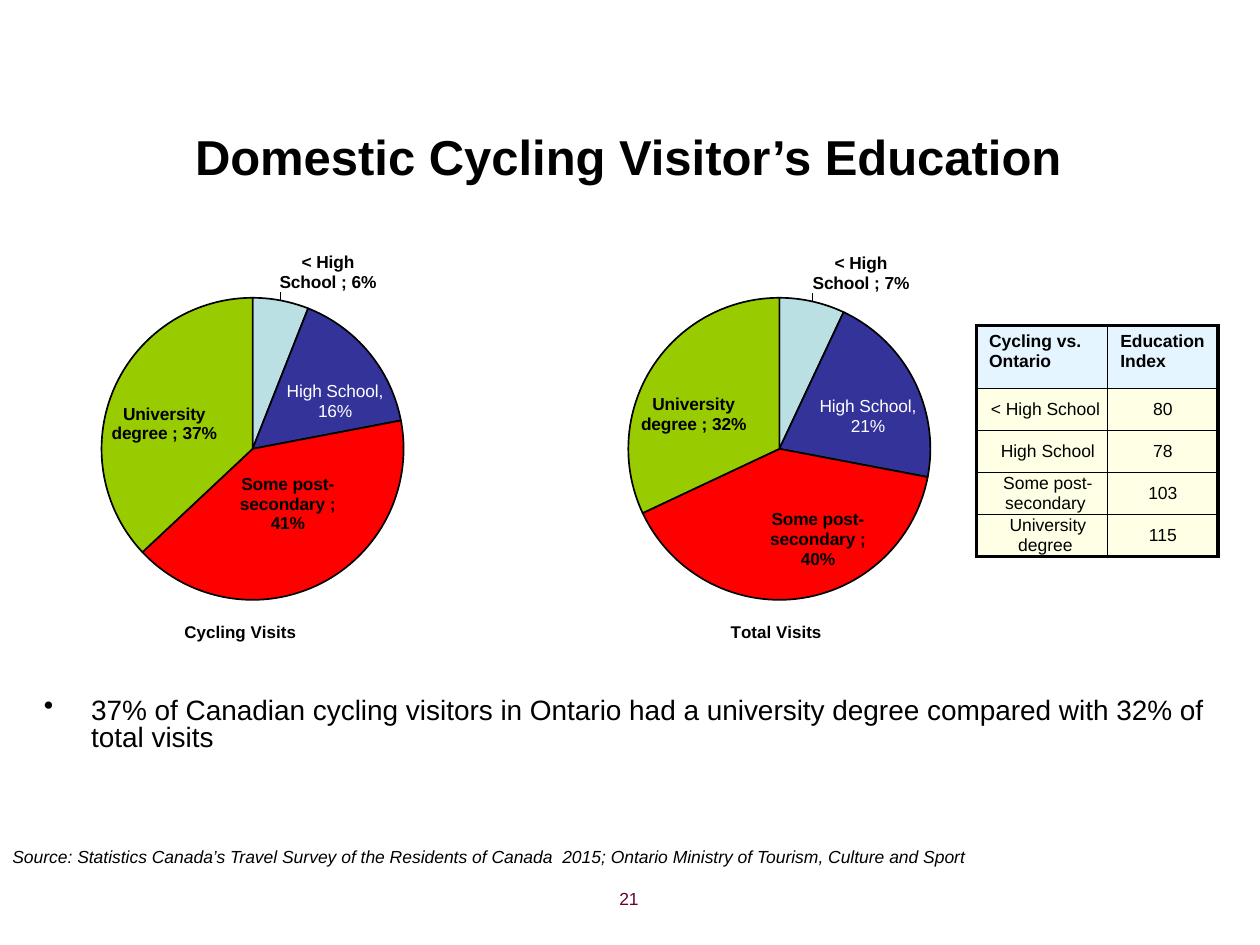
from math import cos, pi, sin

from lxml import etree
from pptx import Presentation
from pptx.chart.data import CategoryChartData
from pptx.dml.color import RGBColor
from pptx.enum.chart import XL_CHART_TYPE, XL_LABEL_POSITION
from pptx.enum.text import MSO_ANCHOR, PP_ALIGN
from pptx.oxml.ns import qn
from pptx.util import Pt

PIE = XL_CHART_TYPE.PIE
LABEL_CENTER = XL_LABEL_POSITION.CENTER
LEFT, CENTER, RIGHT = PP_ALIGN.LEFT, PP_ALIGN.CENTER, PP_ALIGN.RIGHT
TOP, MIDDLE = MSO_ANCHOR.TOP, MSO_ANCHOR.MIDDLE
COLORS = {"black": "000000", "white": "FFFFFF", "page": "660033",
          "header": "CCECFF", "cell": "FFFFCC"}
SLICE_COLORS = ["BBE0E3", "333399", "FF0000", "99CC00"]


def write(frame, text, size, align=LEFT, color="black", bold=False, italic=False):
    """Fill the first paragraph of a text frame with one run."""
    paragraph = frame.paragraphs[0]
    paragraph.alignment = align
    run = paragraph.add_run()
    run.text = text
    font = run.font
    font.name, font.size, font.bold, font.italic = "Arial", Pt(size), bold, italic
    font.color.rgb = RGBColor.from_string(COLORS[color])
    return paragraph


def set_layout(parent, index, **values):
    """Give a chart part a manual layout."""
    for old in parent.findall(qn("c:layout")):
        parent.remove(old)
    layout = etree.Element(qn("c:layout"))
    manual = etree.SubElement(layout, qn("c:manualLayout"))
    for name, value in values.items():
        etree.SubElement(manual, qn(f"c:{name}"), val=str(value))
    parent.insert(index, layout)


presentation = Presentation()
presentation.slide_width, presentation.slide_height = Pt(720), Pt(540)
slide = presentation.slides.add_slide(presentation.slide_layouts[6])

# Title, key point, source and page number
texts = [
    ((12, 62, 694, 54), MIDDLE, "Domestic Cycling Visitor’s Education", 28,
     {"align": CENTER, "bold": True}),
    ((18, 396, 684, 90), TOP,
     "37% of Canadian cycling visitors in Ontario had a university degree "
     "compared with 32% of total visits", 16, {}),
    ((0, 480, 706, 19.4), TOP,
     "Source: Statistics Canada’s Travel Survey of the Residents of Canada  2015; "
     "Ontario Ministry of Tourism, Culture and Sport", 10, {"italic": True}),
    ((204, 504, 168, 25), TOP, "21", 10, {"align": RIGHT, "color": "page"}),
]
paragraphs = []
for box, anchor, text, size, style in texts:
    frame = slide.shapes.add_textbox(*map(Pt, box)).text_frame
    frame.word_wrap = True
    frame.vertical_anchor = anchor
    paragraphs.append(write(frame, text, size, **style))

key_point = paragraphs[1]
key_point.line_spacing = 0.8
properties = key_point._p.get_or_add_pPr()
properties.set("marL", str(Pt(27)))
properties.set("indent", str(-Pt(27)))
etree.SubElement(properties, qn("a:buChar"), char="•")

# Pie charts: label centres are slide positions in points
CHART_TOP, CHART_WIDTH, CHART_HEIGHT = 131.8, 278, 254
PLOT_X, PLOT_Y, PLOT_W, PLOT_H = 0.126, 0.151, 0.621, 0.68
RADIUS = PLOT_W * CHART_WIDTH / 2
categories = ["< High School ", "High School", "Some post-secondary ", "University degree "]
charts = [
    ("Cycling Visits ", 23, 0.29, [0.06, 0.16, 0.41, 0.37],
     [(187.5, 156), (191.5, 229.5), (164.5, 288), (94, 242.5)]),
    ("Total Visits ", 324, 0.33, [0.07, 0.21, 0.4, 0.32],
     [(492, 156.5), (496, 238), (467.5, 308.5), (396.5, 237)]),
]
for title, left, title_x, values, label_centers in charts:
    data = CategoryChartData(number_format="0%")
    data.categories = categories
    data.add_series("Series 1", values)
    chart = slide.shapes.add_chart(
        PIE, Pt(left), Pt(CHART_TOP), Pt(CHART_WIDTH), Pt(CHART_HEIGHT), data).chart
    chart.has_legend = False
    chart.font.name, chart.font.size, chart.font.bold = "Arial", Pt(9.9), True
    chart.font.color.rgb = RGBColor.from_string(COLORS["black"])
    chart.has_title = True
    write(chart.chart_title.text_frame, title, 9.7, CENTER, bold=True)
    set_layout(chart.chart_title._element, 1, xMode="edge", yMode="edge", x=title_x, y=0.87)
    plot_area = chart._chartSpace.find(".//" + qn("c:plotArea"))
    set_layout(plot_area, 0, layoutTarget="inner", xMode="edge", yMode="edge",
               x=PLOT_X, y=PLOT_Y, w=PLOT_W, h=PLOT_H)

    plot = chart.plots[0]
    plot.vary_by_categories = True
    series = plot.series[0]
    labels = series.data_labels
    labels.show_value = labels.show_category_name = True
    labels.show_percentage = False
    labels.number_format, labels.number_format_is_linked = "0%", False

    center_x = left + (PLOT_X + PLOT_W / 2) * CHART_WIDTH
    center_y = CHART_TOP + (PLOT_Y + PLOT_H / 2) * CHART_HEIGHT
    start = 0
    for index, (value, (label_x, label_y)) in enumerate(zip(values, label_centers)):
        point = series.points[index]
        point.format.fill.solid()
        point.format.fill.fore_color.rgb = RGBColor.from_string(SLICE_COLORS[index])
        point.format.line.color.rgb = RGBColor.from_string(COLORS["black"])
        point.format.line.width = Pt(0.97)

        label = point.data_label
        if index == 1:
            write(label.text_frame, f"High School, {value:.0%}", 9.9, CENTER, "white")
        else:
            label.font.name, label.font.size, label.font.bold = "Arial", Pt(9.9), True
            label.font.color.rgb = RGBColor.from_string(COLORS["black"])
        label.position = LABEL_CENTER
        element = series._element.findall(".//" + qn("c:dLbl"))[index]
        element.find(qn("c:showCatName")).set("val", "1")
        element.find(qn("c:showPercent")).set("val", "0")
        etree.SubElement(element, qn("c:separator")).text = "; "
        # Offset from the middle of the slice
        angle = 2 * pi * (start + value / 2)
        default_x = center_x + RADIUS / 2 * sin(angle)
        default_y = center_y - RADIUS / 2 * cos(angle)
        set_layout(element, 1, x=round((label_x - default_x) / CHART_WIDTH, 3),
                   y=round((label_y - default_y) / CHART_HEIGHT, 3))
        start += value

# Education index table
rows = [("Cycling vs. Ontario", "Education Index"), ("< High School ", "80"),
        ("High School", "78"), ("Some post-secondary ", "103"), ("University degree ", "115")]
table = slide.shapes.add_table(5, 2, Pt(558), Pt(186), Pt(138), Pt(131)).table
table.first_row = table.horz_banding = False
for column, width in zip(table.columns, (75, 63)):
    column.width = Pt(width)
for row, height in zip(table.rows, (36, 24, 24, 24, 21.6)):
    row.height = Pt(height)
for row_index, row in enumerate(rows):
    header = row_index == 0
    for column_index, text in enumerate(row):
        cell = table.cell(row_index, column_index)
        cell.margin_left = Pt(7.2 if header else 6.5 * (1 - column_index))
        cell.margin_right = Pt(7.2 if header else 0)
        cell.margin_top = cell.margin_bottom = Pt(3.6 if header else 0)
        cell.vertical_anchor = TOP if header else MIDDLE
        write(cell.text_frame, text, 10, LEFT if header else CENTER, bold=header)
        cell_properties = cell._tc.get_or_add_tcPr()
        outer = {"lnL": column_index == 0, "lnR": column_index == 1,
                 "lnT": header, "lnB": row_index == 4}
        for side, thick in outer.items():
            line = etree.SubElement(cell_properties, qn(f"a:{side}"),
                                    w=str(Pt(2.25 if thick else 1)))
            line_fill = etree.SubElement(line, qn("a:solidFill"))
            etree.SubElement(line_fill, qn("a:srgbClr"), val=COLORS["black"])
        cell.fill.solid()
        cell.fill.fore_color.rgb = RGBColor.from_string(COLORS["header" if header else "cell"])
        fill_color = cell_properties.find(qn("a:solidFill")).find(qn("a:srgbClr"))
        etree.SubElement(fill_color, qn("a:alpha"), val="50000")

presentation.save("out.pptx")
